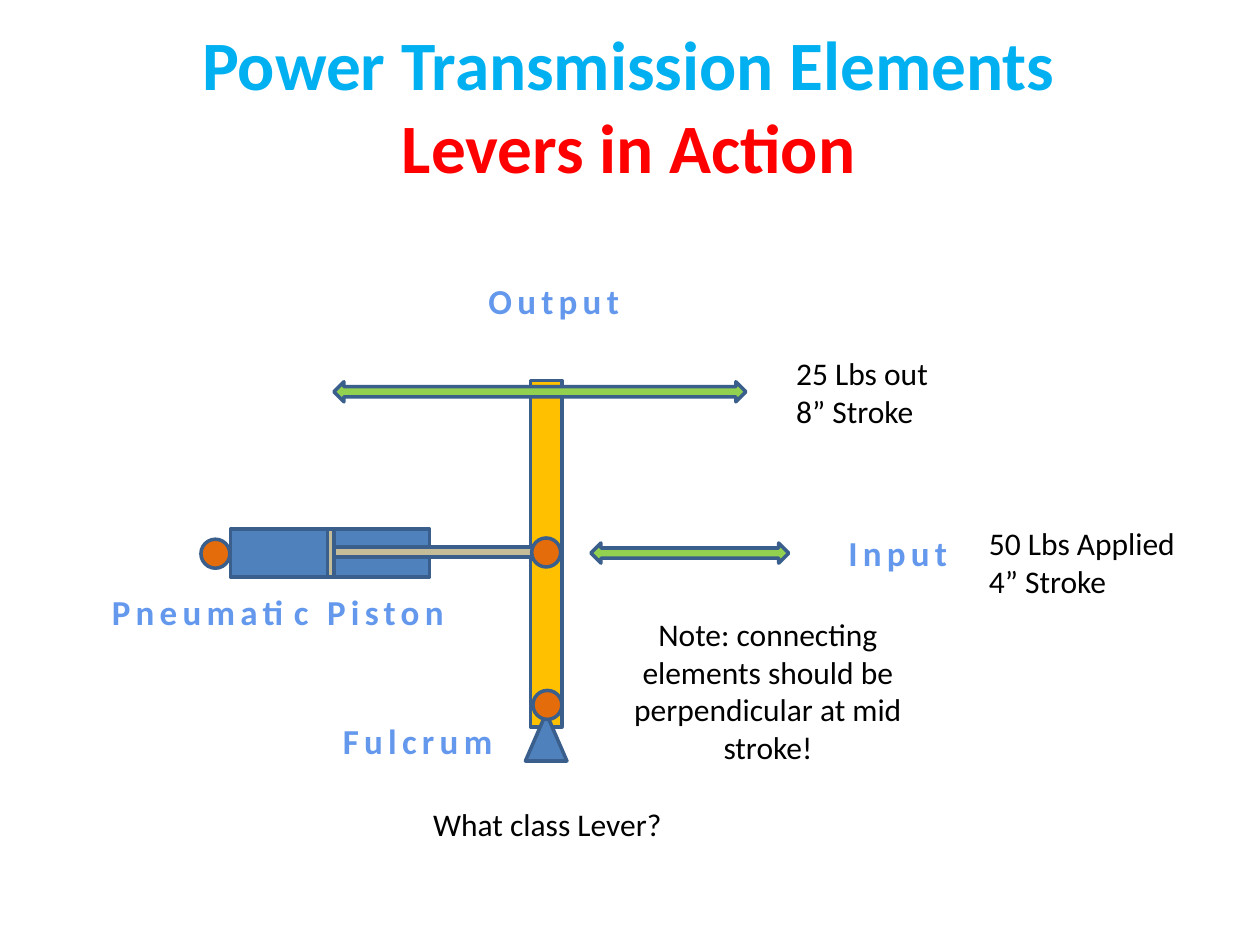
import pptx
import pptx.util
import pptx.dml.color
import pptx.enum.shapes
import pptx.enum.text
import lxml.etree

SHAPE = pptx.enum.shapes.MSO_SHAPE
ALIGN = pptx.enum.text.PP_ALIGN
DRAWING_NS = "http://schemas.openxmlformats.org/drawingml/2006/main"

# The slide is a grid of square cells, 100 columns by 75 rows
CELL = pptx.util.Inches(0.1)
COLUMNS, ROWS = 100, 75

STEEL, EDGE, ROD = "4F81BD", "3A5F8C", "C4BD97"
LEVER, PIVOT, STROKE = "FFC000", "E46C0A", "92D050"


def rgb(color):
    return pptx.dml.color.RGBColor.from_string(color)


def cells(*counts):
    return [round(count * CELL) for count in counts]


def add_run(paragraph, text, size, color=None, bold=False):
    run = paragraph.add_run()
    run.text = text
    run.font.name = "Calibri"
    run.font.size = pptx.util.Pt(size)
    run.font.bold = bold
    if color:
        run.font.color.rgb = rgb(color)
    return run


def add_part(slide, kind, place, fill):
    part = slide.shapes.add_shape(kind, *cells(*place))
    part.shadow.inherit = False
    part.fill.solid()
    part.fill.fore_color.rgb = rgb(fill)
    part.line.color.rgb = rgb(EDGE)
    part.line.width = pptx.util.Pt(2)


def add_pivot(slide, column, row, diameter=2.3):
    """Round joint centred on a grid point."""
    corner = (column - diameter / 2, row - diameter / 2)
    add_part(slide, SHAPE.OVAL, (*corner, diameter, diameter), PIVOT)


def add_text_frame(slide, place):
    frame = slide.shapes.add_textbox(*cells(*place)).text_frame
    frame.word_wrap = True
    frame.auto_size = pptx.enum.text.MSO_AUTO_SIZE.SHAPE_TO_FIT_TEXT
    return frame


def add_note(slide, place, lines, align=ALIGN.LEFT):
    frame = add_text_frame(slide, place)
    for index, line in enumerate(lines):
        paragraph = frame.add_paragraph() if index else frame.paragraphs[0]
        paragraph.alignment = align
        add_run(paragraph, line, 18, "000000")


def add_label(slide, place, text):
    """Spaced lettering with a gradient fill and a pale outline."""
    paragraph = add_text_frame(slide, place).paragraphs[0]
    paragraph.alignment = ALIGN.CENTER
    run = add_run(paragraph, text, 20, bold=True)

    fill = run.font.fill
    fill.gradient()
    fill.gradient_angle = 270
    stops = ((0.10, "6398ED"), (0.75, "265EA0"))
    for stop, (position, color) in zip(fill.gradient_stops, stops):
        stop.position = position
        stop.color.rgb = rgb(color)

    properties = run.font._element
    properties.set("spc", "300")
    outline = lxml.etree.fromstring(
        f'<a:ln xmlns:a="{DRAWING_NS}" w="{pptx.util.Pt(0.9)}">'
        '<a:solidFill><a:srgbClr val="F4F6F9"/></a:solidFill></a:ln>')
    properties.insert(0, outline)


def set_title(slide):
    title = slide.shapes.title
    title.left, title.top, title.width, title.height = cells(7.4, 3.3, 85, 10)
    frame = title.text_frame
    frame.word_wrap = True
    frame.vertical_anchor = pptx.enum.text.MSO_ANCHOR.MIDDLE
    heading = frame.paragraphs[0]
    heading.alignment = ALIGN.CENTER
    add_run(heading, "Power Transmission Elements", 39.6, "00B0F0", True)
    heading.add_line_break()
    add_run(heading, "Levers in Action", 39.6, "FF0000", True)


def main():
    deck = pptx.Presentation()
    deck.slide_width, deck.slide_height = cells(COLUMNS, ROWS)
    slide = deck.slides.add_slide(deck.slide_layouts[5])
    set_title(slide)

    # Lever on its fulcrum
    add_part(slide, SHAPE.RECTANGLE, (42.1, 30.2, 2.5, 27.5), LEVER)
    add_part(slide, SHAPE.ISOSCELES_TRIANGLE, (41.7, 56.6, 3.3, 3.8), STEEL)

    # Pneumatic piston: cylinder, rod, piston head
    for place, fill in (((18.3, 42, 15.8, 3.8), STEEL),
                        ((26, 43.4, 16.4, 0.8), ROD),
                        ((26, 42, 0.5, 3.8), ROD)):
        add_part(slide, SHAPE.RECTANGLE, place, fill)

    # Joints: cylinder mount, rod end, fulcrum
    for column, row in ((17.1, 43.95), (43.35, 43.85), (43.45, 55.95)):
        add_pivot(slide, column, row)

    # Input and output strokes
    for left, top, length in ((46.9, 43.1, 15.7), (26.5, 30.3, 32.7)):
        add_part(slide, SHAPE.LEFT_RIGHT_ARROW, (left, top, length, 1.6), STROKE)

    # Names of the parts
    for left, top, width, text in ((65, 41.7, 12.5, "Input"),
                                   (36.8, 21.7, 14.3, "Output"),
                                   (26, 56.6, 14.3, "Fulcrum"),
                                   (5.8, 46.4, 32.5, "Pneumatic Piston")):
        add_label(slide, (left, top, width, 4.4), text)

    # Forces, question and advice
    add_note(slide, (77.5, 41.1, 19.2, 7.1), ["50 Lbs Applied", "4” Stroke"])
    add_note(slide, (62.2, 27.6, 14.2, 7.1), ["25 Lbs out", "8” Stroke"])
    add_note(slide, (30.8, 63.4, 25.3, 4), ["What class Lever?"], ALIGN.CENTER)
    add_note(slide, (48.3, 48.3, 25.3, 13.1),
             ["Note: connecting elements should be perpendicular at mid stroke!"],
             ALIGN.CENTER)

    deck.save("out.pptx")


if __name__ == "__main__":
    main()
